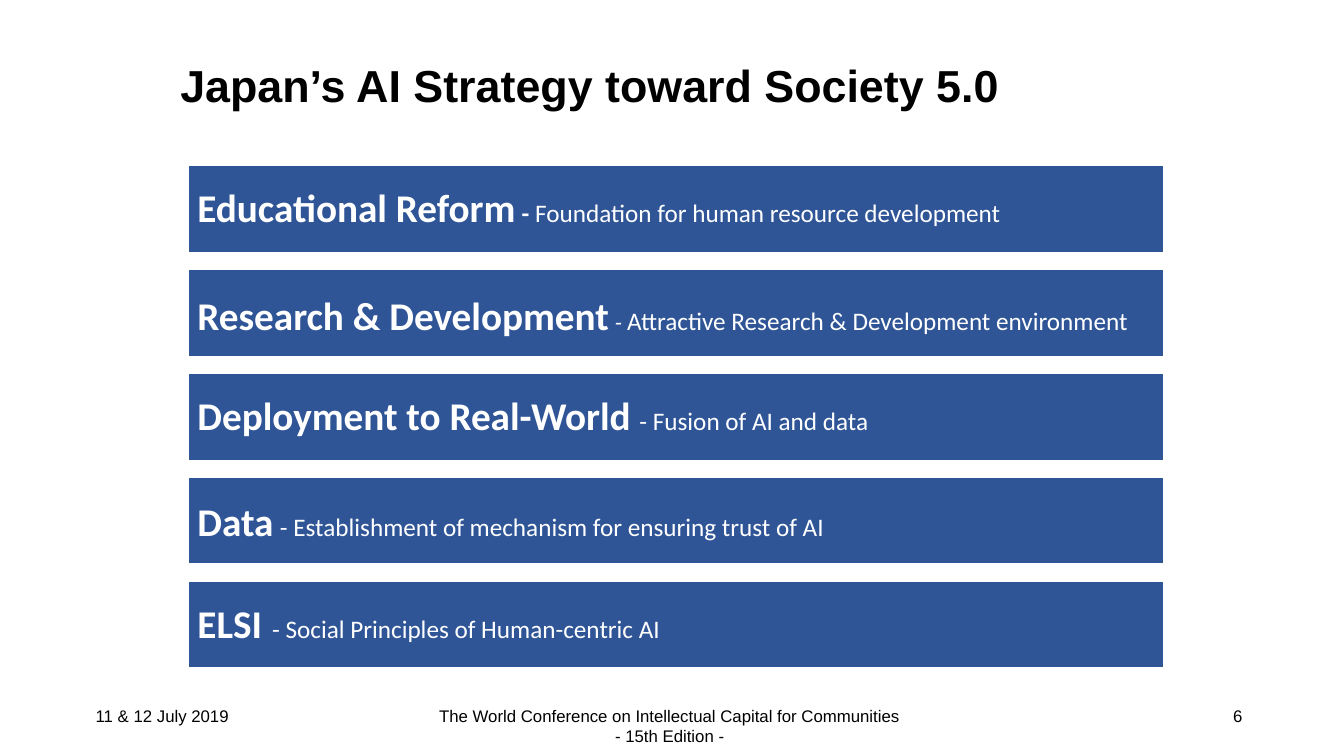
import pptx
import pptx.util
import pptx.dml.color
import pptx.enum.shapes
import pptx.enum.text

SLIDE_WIDTH, SLIDE_HEIGHT = 13.33, 7.5
BLACK, WHITE, BLUE = "000000", "FFFFFF", "2F5597"
ALIGN = pptx.enum.text.PP_ALIGN
ANCHOR = pptx.enum.text.MSO_ANCHOR

TITLE = "Japan’s AI Strategy toward Society 5.0"

FOOTERS = [
    (["11 & 12 July 2019"], (0.85, 1.58, 0.3), ALIGN.LEFT, False),
    (["The World Conference on Intellectual Capital for Communities ",
      "- 15th Edition - "], (4.24, 4.85, 0.5), ALIGN.CENTER, False),
    (["6"], (9.42, 3, 0.4), ALIGN.RIGHT, True),
]

PILLARS = [
    (0.13, 0.57, [("Educational Reform", 28, True), (" ", 20, True), ("- ", 18, True),
                  ("Foundation for human resource development", 18, False)]),
    (0.17, 0.57, [("Research & Development", 28, True), (" ", 20, True), ("- ", 16, False),
                  ("Attractive Research & Development environment", 18, False)]),
    (0.13, 0.57, [("Deployment to Real-World ", 28, True),
                  ("- Fusion of AI and data", 18, False)]),
    (0.15, 0.57, [("Data", 28, True), (" ", 20, False),
                  ("- Establishment of mechanism for ensuring trust of AI", 18, False)]),
    (0.08, 0.64, [("ELSI", 28, True), (" ", 32, False),
                  ("- Social Principles of Human-centric AI", 18, False)]),
]

BAR_LEFT, BAR_TOP, BAR_WIDTH, BAR_HEIGHT = 1.86, 1.64, 9.69, 0.87
BAR_PITCH = 1.03
LABEL_WIDTH = 9.83
FOOTER_TOP = 6.95


def color(code):
    return pptx.dml.color.RGBColor.from_string(code)


def inches(*lengths):
    return [pptx.util.Inches(length) for length in lengths]


def add_run(paragraph, words, size, bold, font_name, ink):
    run = paragraph.add_run()
    run.text = words
    run.font.size = pptx.util.Pt(size)
    run.font.bold = bold
    run.font.name = font_name
    run.font.color.rgb = color(ink)


def add_text_frame(slide, left, top, width, height, wrap=True, anchor=ANCHOR.TOP):
    frame = slide.shapes.add_textbox(*inches(left, top, width, height)).text_frame
    frame.word_wrap = wrap
    frame.vertical_anchor = anchor
    return frame


def add_title(slide):
    frame = add_text_frame(slide, 1.69, 0.46, 10.73, 0.83, anchor=ANCHOR.MIDDLE)
    paragraph = frame.paragraphs[0]
    paragraph.line_spacing = 0.9
    add_run(paragraph, TITLE, 32, True, "Arial", BLACK)


def add_footer(slide, lines, place, alignment, wrap):
    left, width, height = place
    frame = add_text_frame(slide, left, FOOTER_TOP, width, height, wrap)
    paragraph = frame.paragraphs[0]
    paragraph.alignment = alignment
    for number, line in enumerate(lines):
        if number:
            paragraph.add_line_break()
        add_run(paragraph, line, 12, False, "Arial", BLACK)


def add_pillar(slide, row, label_drop, label_height, phrases):
    top = BAR_TOP + row * BAR_PITCH
    bar = slide.shapes.add_shape(
        pptx.enum.shapes.MSO_SHAPE.PARALLELOGRAM,
        *inches(BAR_LEFT, top, BAR_WIDTH, BAR_HEIGHT))
    bar.adjustments[0] = 0
    bar.shadow.inherit = False
    bar.fill.solid()
    bar.fill.fore_color.rgb = color(BLUE)
    bar.line.color.rgb = color(WHITE)
    bar.line.width = pptx.util.Pt(1.5)
    label = add_text_frame(slide, BAR_LEFT, top + label_drop, LABEL_WIDTH, label_height)
    for words, size, bold in phrases:
        add_run(label.paragraphs[0], words, size, bold, "Calibri", WHITE)


def main():
    deck = pptx.Presentation()
    deck.slide_width, deck.slide_height = inches(SLIDE_WIDTH, SLIDE_HEIGHT)
    slide = deck.slides.add_slide(deck.slide_layouts[6])
    for footer in FOOTERS:
        add_footer(slide, *footer)
    add_title(slide)
    for row, pillar in enumerate(PILLARS):
        add_pillar(slide, row, *pillar)
    deck.save("out.pptx")


if __name__ == "__main__":
    main()
